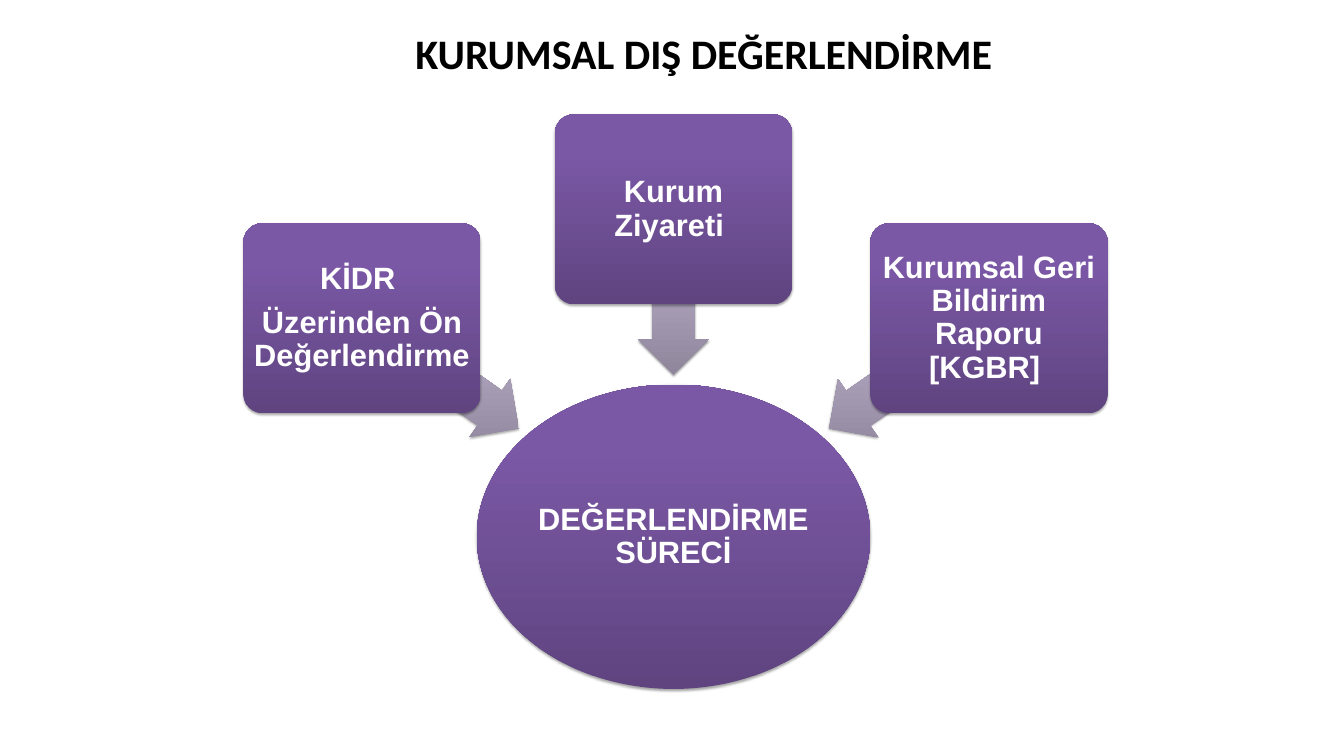
"""Build the external evaluation slide: three inputs leading to one process."""
from lxml import etree
from pptx import Presentation
from pptx.dml.color import RGBColor
from pptx.enum.shapes import MSO_SHAPE
from pptx.enum.text import MSO_ANCHOR, MSO_AUTO_SIZE, PP_ALIGN
from pptx.oxml import parse_xml
from pptx.oxml.ns import qn
from pptx.util import Pt

PX = 9144
OVAL, CARD, ARROW = MSO_SHAPE.OVAL, MSO_SHAPE.ROUNDED_RECTANGLE, MSO_SHAPE.LEFT_ARROW
LEFT, CENTER = PP_ALIGN.LEFT, PP_ALIGN.CENTER
TOP, MIDDLE = MSO_ANCHOR.TOP, MSO_ANCHOR.MIDDLE
GROW = MSO_AUTO_SIZE.SHAPE_TO_FIT_TEXT
PURPLE = ("5F4480", "7B58A6")
MAUVE = ("8F869C", "BAAFCB")
SHADOW = (
    '<a:outerShdw xmlns:a="http://schemas.openxmlformats.org/drawingml/2006/main"'
    ' blurRad="40000" dist="23000" dir="5400000" rotWithShape="0">'
    '<a:srgbClr val="000000"><a:alpha val="35000"/></a:srgbClr></a:outerShdw>'
)


def add_block(kind, box, colors):
    """Add a borderless shape with a vertical gradient and a soft shadow."""
    block = slide.shapes.add_shape(kind, *(v * PX for v in box))
    block.line.fill.background()
    block.fill.gradient()
    block.fill.gradient_angle = 90
    for stop, position, color in zip(block.fill.gradient_stops, (0, 0.8), colors):
        stop.position = position
        stop.color.rgb = RGBColor.from_string(color)
    properties = block._element.spPr
    properties.find(qn("a:gradFill")).set("rotWithShape", "0")
    block.shadow.inherit = False
    properties.find(qn("a:effectLst")).append(parse_xml(SHADOW))
    return block


def write_label(block, text, inset):
    """Write centred bold white text inside a block."""
    frame = block.text_frame
    frame.text = text
    frame.word_wrap = True
    frame.vertical_anchor = MIDDLE
    frame.margin_left = frame.margin_right = inset * PX
    frame.margin_top = frame.margin_bottom = inset * PX
    for paragraph in frame.paragraphs:
        paragraph.alignment = CENTER
        paragraph.line_spacing = 0.9
        paragraph.space_after = Pt(15)
        for run in paragraph.runs:
            run.font.name = "Arial"
            run.font.size = Pt(44)
            run.font.bold = True
            run.font.color.rgb = RGBColor.from_string("FFFFFF")


prs = Presentation()
prs.slide_width, prs.slide_height = 2667 * PX, 1500 * PX
slide = prs.slides.add_slide(prs.slide_layouts[5])

process = add_block(OVAL, (946, 763, 781, 604), PURPLE)
write_label(process, "DEĞERLENDİRME SÜRECİ", 3)

steps = [
    ("KİDR \nÜzerinden Ön Değerlendirme", 483, 443, (684, 670, 380, 141), 215.1),
    ("Kurum Ziyareti ", 1101, 227, (1172, 509, 329, 141), 270),
    ("Kurumsal Geri Bildirim Raporu [KGBR] ", 1727, 443, (1611, 670, 385, 141), 325.3),
]
for text, left, top, arrow_box, angle in steps:
    arrow = add_block(ARROW, arrow_box, MAUVE)
    arrow.adjustments[0] = 0.6
    arrow.adjustments[1] = 0.5
    arrow.rotation = angle
    step = add_block(CARD, (left, top, 471, 377), PURPLE)
    step.adjustments[0] = 0.1
    write_label(step, text, 9)

heading = slide.shapes.title
heading.left, heading.top, heading.width, heading.height = (
    v * PX for v in (814, 49, 1347, 111)
)
heading.text_frame.text = "KURUMSAL DIŞ DEĞERLENDİRME"
heading.text_frame.vertical_anchor = TOP
heading.text_frame.auto_size = GROW
heading_line = heading.text_frame.paragraphs[0]
heading_line.alignment = LEFT
heading_font = heading_line.runs[0].font
heading_font.name = "Calibri"
heading_font.size = Pt(60)
heading_font.bold = True
heading_font.color.rgb = RGBColor.from_string("000000")

prs.save("out.pptx")
